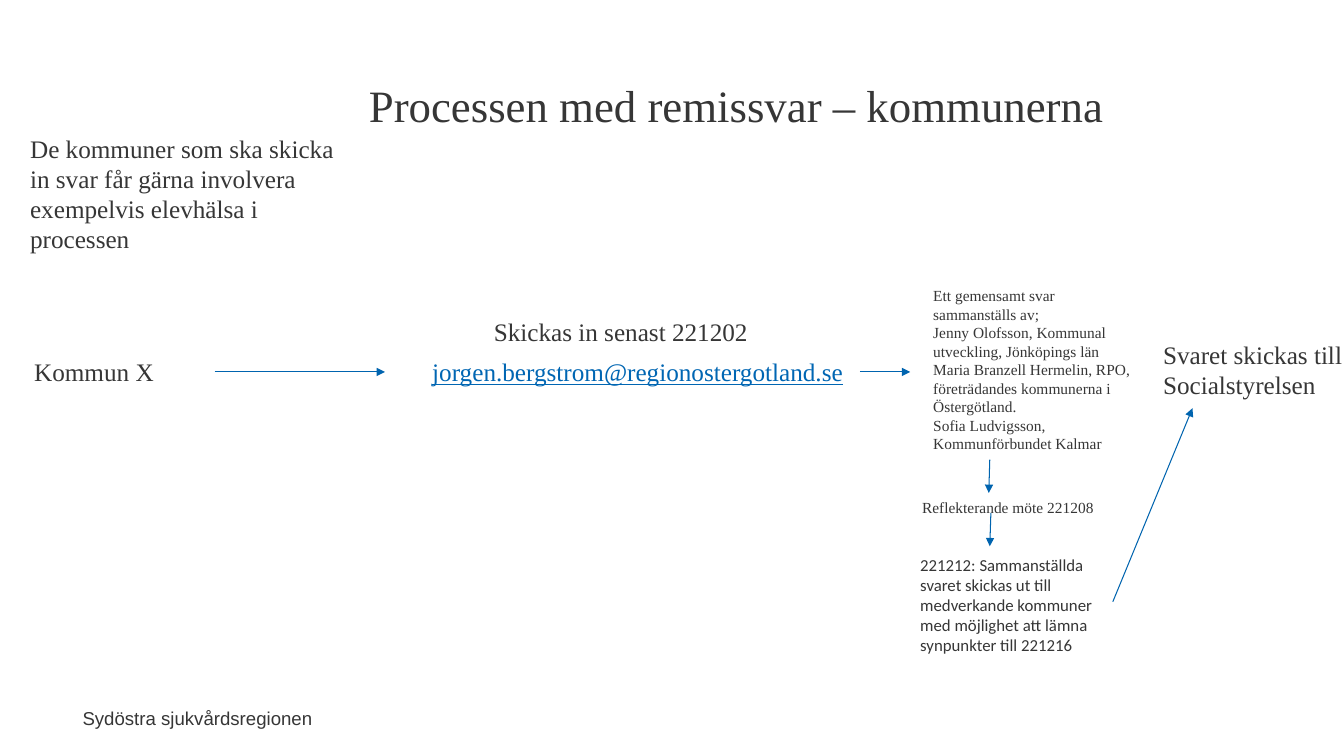
from lxml.etree import SubElement
from pptx import Presentation
from pptx.dml.color import RGBColor
from pptx.enum.shapes import MSO_CONNECTOR
from pptx.enum.text import MSO_ANCHOR, MSO_AUTO_SIZE as AutoSize, PP_ALIGN as Align
from pptx.oxml.ns import qn
from pptx.util import Pt

COLORS = {"text": "363636", "link": "0066B3", "arrow": "0064AF"}
SERIF = "Times New Roman"
RIGHT_SIDE = 3


class ProcessSlide:
    def __init__(self, slide):
        self.slide = slide
        self.shapes = slide.shapes

    def color(self, name):
        return RGBColor.from_string(COLORS[name])

    def fill_text(self, shape, paragraphs, size, font=SERIF, color="text",
                  underline=False, align=Align.LEFT, wrap=True):
        frame = shape.text_frame
        frame.word_wrap = wrap
        frame.auto_size = AutoSize.SHAPE_TO_FIT_TEXT
        frame.vertical_anchor = MSO_ANCHOR.TOP
        for index, wording in enumerate(paragraphs):
            paragraph = frame.add_paragraph() if index else frame.paragraphs[0]
            paragraph.alignment = align
            run = paragraph.add_run()
            run.text = wording
            run.font.size = Pt(size)
            run.font.name = font
            run.font.color.rgb = self.color(color)
            run.font.underline = underline

    def title(self, box, wording, size):
        heading = self.shapes.title
        heading.left, heading.top, heading.width, heading.height = map(Pt, box)
        self.fill_text(heading, [wording], size)

    def text(self, box, paragraphs, size=18, **style):
        label = self.shapes.add_textbox(*map(Pt, box))
        self.fill_text(label, paragraphs, size, **style)
        return label

    def arrow(self, start, end, source=None):
        connector = self.shapes.add_connector(
            MSO_CONNECTOR.STRAIGHT, *map(Pt, start + end))
        connector.line.color.rgb = self.color("arrow")
        connector.line.width = Pt(0.75)
        outline = connector.line._get_or_add_ln()
        SubElement(outline, qn("a:tailEnd"), type="triangle")
        SubElement(connector._element.spPr, qn("a:effectLst"))
        if source is not None:
            connector.begin_connect(source, RIGHT_SIDE)


def main():
    deck = Presentation()
    deck.slide_width, deck.slide_height = Pt(960), Pt(540)
    process = ProcessSlide(deck.slides.add_slide(deck.slide_layouts[5]))

    process.text((50.4, 501.1, 180, 23.8), ["Sydöstra sjukvårdsregionen"], 13.3,
                 font="Arial", align=Align.RIGHT, wrap=False)
    process.title((256.3, 51.8, 635, 46.1), "Processen med remissvar – kommunerna", 32)
    process.text((14.4, 91.4, 231.8, 94.3), [
        "De kommuner som ska skicka in svar får gärna involvera exempelvis "
        "elevhälsa i processen"])

    process.text((17.3, 251.3, 231.8, 28.8), ["Kommun X"])
    process.arrow((153.4, 265.7), (275, 265.7))
    process.text((345.6, 222.5, 222.5, 28.8), ["Skickas in senast 221202"])
    address = process.text((301.7, 251.3, 312.5, 28.8),
                           ["jorgen.bergstrom@regionostergotland.se"],
                           color="link", underline=True)
    process.arrow((614.2, 265.7), (650.2, 265.7), source=address)

    process.text((659.5, 200.9, 172.1, 127.4), [
        "Ett gemensamt svar",
        "sammanställs av;",
        "Jenny Olofsson, Kommunal utveckling, Jönköpings län",
        "Maria Branzell Hermelin, RPO, företrädandes kommunerna i Östergötland.",
        "Sofia Ludvigsson, Kommunförbundet Kalmar"], 11)
    process.arrow((707, 328.3), (706.3, 352.1))
    process.text((651.6, 352.1, 192.2, 20.9), ["Reflekterande möte 221208"], 11)
    process.arrow((707.8, 366.5), (707, 390.2))
    process.text((650.2, 392.4, 157, 79.9), [
        "221212: Sammanställda svaret skickas ut till medverkande kommuner "
        "med möjlighet att lämna synpunkter till 221216"], 12, font="Calibri")
    process.arrow((794.9, 429.8), (851.8, 291.6))
    process.text((823.7, 239, 149, 51.1), ["Svaret skickas till Socialstyrelsen"])

    deck.save("out.pptx")


if __name__ == "__main__":
    main()
